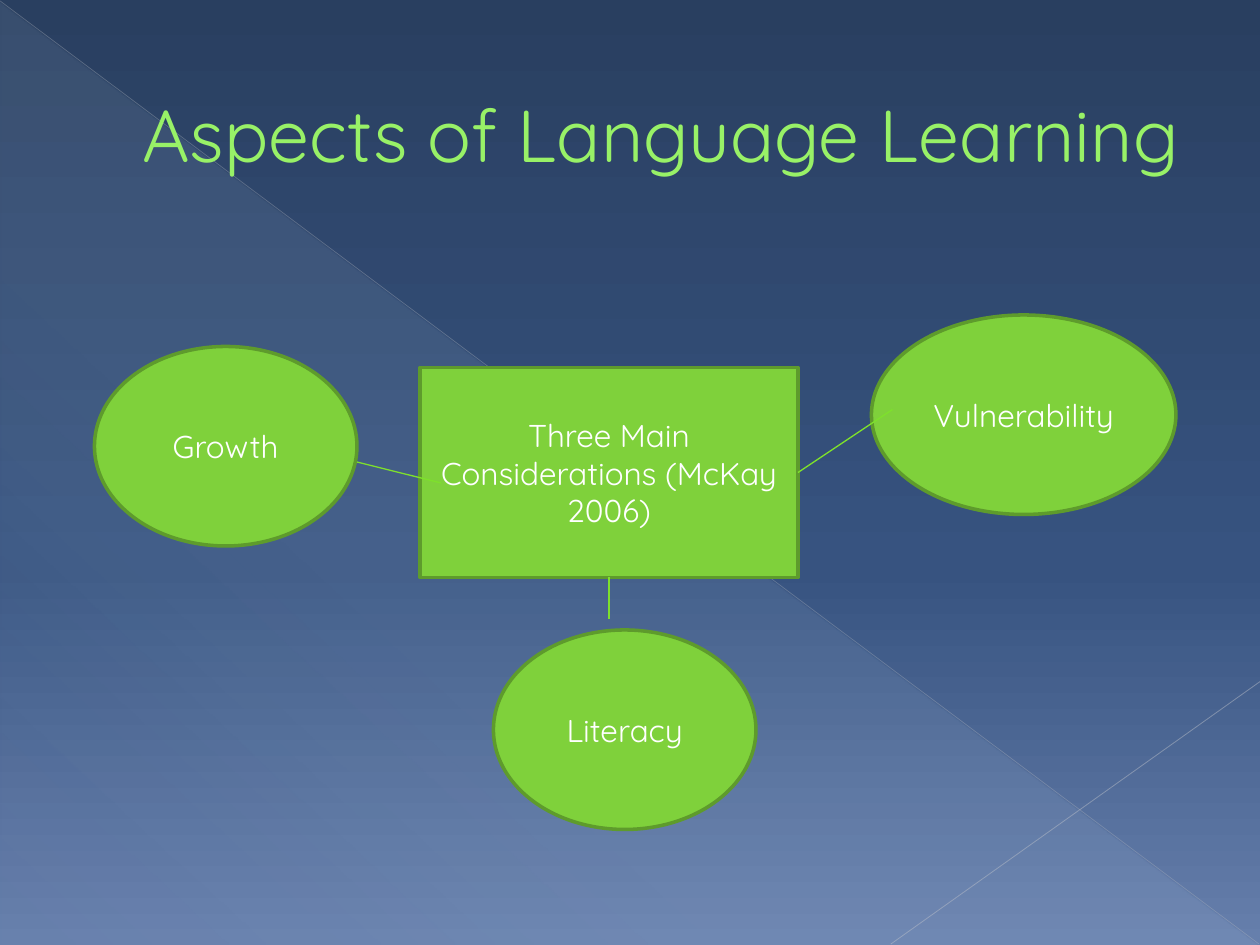
from dataclasses import dataclass
from typing import Optional

from lxml.etree import SubElement
from pptx import Presentation
from pptx.dml.color import RGBColor
from pptx.enum.shapes import MSO_CONNECTOR, MSO_SHAPE
from pptx.enum.text import MSO_ANCHOR, MSO_AUTO_SIZE, PP_ALIGN
from pptx.oxml.ns import qn
from pptx.util import Pt


@dataclass(frozen=True)
class Theme:
    font: str = "Quicksand"
    head: str = "98F167"
    text: str = "FFFFFF"
    fill: str = "7FD13B"
    edge: str = "5E9B2C"
    link: str = "7EE02C"
    glow: str = "D6ECFF"
    ray: str = "B7BCC5"
    beam: str = "BFC3CB"
    sky: tuple = ("293F60", "375380", "667FAC")
    head_size: float = 42
    text_size: float = 18


@dataclass(frozen=True)
class Node:
    text: str
    kind: MSO_SHAPE
    left: float
    top: float
    width: float
    height: float


@dataclass(frozen=True)
class Line:
    start: tuple
    end: tuple
    color: str
    width: float
    alpha: Optional[int] = None
    side: Optional[int] = None


@dataclass(frozen=True)
class Stop:
    place: int
    color: str
    alpha: int = 100


THEME = Theme()
SIZE = (720, 540)
OVAL = (150, 114)
HUB = Node("Three Main Considerations (McKay 2006)", MSO_SHAPE.RECTANGLE, 240, 210, 216, 120)
NODES = [
    Node("Growth", MSO_SHAPE.OVAL, 54, 198, *OVAL),
    Node("Literacy", MSO_SHAPE.OVAL, 282, 360, *OVAL),
    Node("Vulnerability", MSO_SHAPE.OVAL, 498, 180, 174, 114),
]
RAYS = [
    Line((0, 0.5), (719.5, 539.5), THEME.ray, 0.39, alpha=35),
    Line((720, 389.5), (509, 539.5), THEME.beam, 0.47, alpha=45),
]
LINKS = [
    Line((252, 276), (204, 264), THEME.link, 0.75),
    Line((456, 270), (510, 234), THEME.link, 0.75, side=3),
    Line((348, 330), (348, 354), THEME.link, 0.75, side=2),
]


def set_alpha(color, value: int) -> None:
    SubElement(color, qn("a:alpha")).set("val", str(value * 1000))


def set_grad(fill, root, stops: list, angle: int) -> None:
    fill.gradient()
    grad = root.find(".//" + qn("a:gradFill"))
    items = grad.find(qn("a:gsLst"))
    items.clear()
    for stop in stops:
        item = SubElement(items, qn("a:gs"), pos=str(stop.place * 1000))
        color = SubElement(item, qn("a:srgbClr"), val=stop.color)
        if stop.alpha < 100:
            set_alpha(color, stop.alpha)
    grad.find(qn("a:lin")).set("ang", str(angle * 60000))


def set_font(para, size: float, color: str) -> None:
    para.font.name = THEME.font
    para.font.size = Pt(size)
    para.font.color.rgb = RGBColor.from_string(color)


def add_node(slide, node: Node):
    shape = slide.shapes.add_shape(
        node.kind, Pt(node.left), Pt(node.top), Pt(node.width), Pt(node.height)
    )
    shape.shadow.inherit = False
    shape.fill.solid()
    shape.fill.fore_color.rgb = RGBColor.from_string(THEME.fill)
    shape.line.color.rgb = RGBColor.from_string(THEME.edge)
    shape.line.width = Pt(2)
    frame = shape.text_frame
    frame.word_wrap = True
    frame.vertical_anchor = MSO_ANCHOR.MIDDLE
    frame.text = node.text
    para = frame.paragraphs[0]
    para.alignment = PP_ALIGN.CENTER
    set_font(para, THEME.text_size, THEME.text)
    return shape


def add_line(slide, line: Line, hub=None) -> None:
    ends = [Pt(value) for value in (*line.start, *line.end)]
    link = slide.shapes.add_connector(MSO_CONNECTOR.STRAIGHT, *ends)
    link.line.color.rgb = RGBColor.from_string(line.color)
    link.line.width = Pt(line.width)
    props = link.element.spPr
    SubElement(props, qn("a:effectLst"))
    if line.alpha is not None:
        set_alpha(props.find(".//" + qn("a:srgbClr")), line.alpha)
    if hub is not None and line.side is not None:
        link.begin_connect(hub, line.side)


def add_decor(slide) -> None:
    sky = [Stop(place, color) for place, color in zip((0, 60, 100), THEME.sky)]
    set_grad(slide.background.fill, slide.element, sky, 90)
    wedge = slide.shapes.add_shape(
        MSO_SHAPE.RIGHT_TRIANGLE, Pt(0.5), Pt(1.5), Pt(718.5), Pt(538.5)
    )
    wedge.shadow.inherit = False
    wedge.line.fill.background()
    glow = [Stop(0, THEME.glow, 10), Stop(70, THEME.glow, 8), Stop(100, THEME.glow, 1)]
    set_grad(wedge.fill, wedge.element, glow, 133)
    for ray in RAYS:
        add_line(slide, ray)


def add_title(slide, text: str) -> None:
    title = slide.shapes.title
    title.element.getparent().append(title.element)
    title.left, title.top, title.width, title.height = Pt(36), Pt(21), Pt(648), Pt(110)
    frame = title.text_frame
    frame.text = text
    frame.word_wrap = True
    frame.auto_size = MSO_AUTO_SIZE.NONE
    frame.vertical_anchor = MSO_ANCHOR.MIDDLE
    para = frame.paragraphs[0]
    para.alignment = PP_ALIGN.LEFT
    set_font(para, THEME.head_size, THEME.head)
    props = para._p.get_or_add_pPr()
    props.set("marL", str(Pt(38)))
    props.set("indent", "0")


def main() -> None:
    deck = Presentation()
    deck.slide_width, deck.slide_height = map(Pt, SIZE)
    slide = deck.slides.add_slide(deck.slide_layouts[5])
    add_decor(slide)
    add_title(slide, "Aspects of Language Learning")
    hub = add_node(slide, HUB)
    for node in NODES:
        add_node(slide, node)
    for link in LINKS:
        add_line(slide, link, hub)
    deck.save("out.pptx")


if __name__ == "__main__":
    main()
